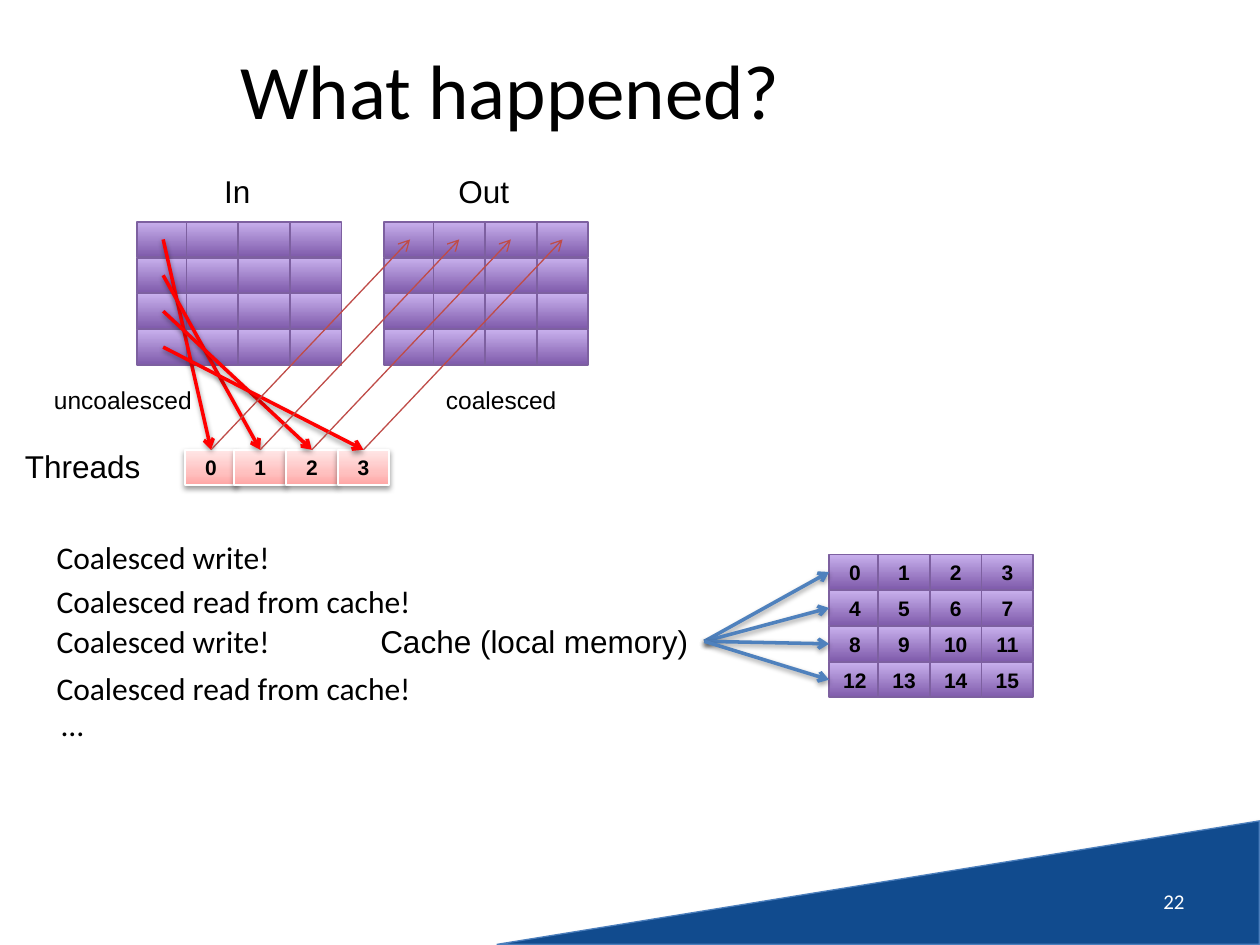
import pptx
import pptx.util
import pptx.dml.color
import pptx.enum.shapes
import pptx.enum.text
import pptx.oxml.ns
import lxml.etree

Inches, Pt = pptx.util.Inches, pptx.util.Pt
Shape = pptx.enum.shapes.MSO_SHAPE
Align = pptx.enum.text.PP_ALIGN
Anchor = pptx.enum.text.MSO_ANCHOR

THEME = {
    "head": "Calibri", "body": "Arial",
    "black": "000000", "white": "FFFFFF",
    "band": "114B8E", "edge": "4B7EBC",
    "read": "FF0000", "write": "BF4C48", "cache": "4F81BD",
    "purple": ([(0, "7F5BAB"), (100, "C8B0ED")], "7D60A0"),
    "pink": ([(0, "FFA6A5"), (35, "FFC0BF"), (100, "FFE7E7")], "FFFFFF"),
    "title": 44, "text": 18, "note": 14, "cell": 12,
    "thick": 2, "thin": 0.75, "border": 1,
}

TITLE = "What happened?"
NUMBER = "22"
BLANK = [[""] * 4 for row in range(4)]
THREADS = [["0", "1", "2", "3"]]
CACHE = [[str(4 * row + col) for col in range(4)] for row in range(4)]

LABELS = [
    ("uncoalesced", 0.33, 3.01, 1.3, "note", "body"),
    ("coalesced", 3.44, 3.01, 1.09, "note", "body"),
    ("Threads", 0.1, 3.5, 1.13, "text", "body"),
    ("In", 1.68, 1.32, 0.41, "text", "body"),
    ("Out", 3.54, 1.32, 0.61, "text", "body"),
    ("Cache (local memory)", 2.92, 4.89, 2.67, "text", "body"),
    ("Coalesced write!", 0.35, 4.22, 1.91, "text", "head"),
    ("Coalesced read from cache!", 0.35, 4.57, 3.05, "text", "head"),
    ("Coalesced write!", 0.35, 4.89, 1.91, "text", "head"),
    ("Coalesced read from cache!", 0.35, 5.26, 3.05, "text", "head"),
    ("…", 0.39, 5.55, 0.38, "text", "head"),
]

COLS = (0, 0.39, 0.8, 1.21)
WIDE, HIGH, STEP = 0.41, 0.28, 0.285
SOURCE = (5.59, 5.09)


def color(name):
    return pptx.dml.color.RGBColor.from_string(name)


def node(parent, tag, **attrs):
    return lxml.etree.SubElement(parent, pptx.oxml.ns.qn(tag), **attrs)


def effect(shape, alpha=0, dist=1.6):
    box = node(shape._element.spPr, "a:effectLst")
    if alpha:
        cast = node(box, "a:outerShdw", blurRad=str(Pt(3.1)), dist=str(Pt(dist)),
                    dir="5400000", rotWithShape="0")
        tint = node(cast, "a:srgbClr", val=THEME["black"])
        node(tint, "a:alpha", val=str(alpha * 1000))


def write(frame, text, font, size, align=Align.LEFT, ink="black", bold=False):
    para = frame.paragraphs[0]
    para.alignment = align
    run = para.add_run()
    run.text = text
    run.font.name = THEME[font]
    run.font.size = Pt(THEME[size])
    run.font.bold = bold
    run.font.color.rgb = color(THEME[ink])


def label(slide, text, left, top, width, size, font, **style):
    height = 0.34 if size == "note" else 0.4
    box = slide.shapes.add_textbox(*map(Inches, (left, top, width, height)))
    box.text_frame.word_wrap = False
    write(box.text_frame, text, font, size, **style)
    return box


def shade(shape, stops):
    shape.fill.gradient()
    shape.fill.gradient_angle = 90
    ramp = shape._element.spPr.find(".//" + pptx.oxml.ns.qn("a:gsLst"))
    for stop in list(ramp):
        ramp.remove(stop)
    for place, tint in stops:
        node(node(ramp, "a:gs", pos=str(place * 1000)), "a:srgbClr", val=tint)


def grid(slide, rows, left, top, look, alpha=0):
    stops, edge = THEME[look]
    cells = []
    for r, row in enumerate(rows):
        cells.append([])
        for shift, text in zip(COLS, row):
            cell = slide.shapes.add_shape(
                Shape.RECTANGLE, Inches(left + shift), Inches(top + r * STEP),
                Inches(WIDE), Inches(HIGH))
            shade(cell, stops)
            cell.line.color.rgb = color(edge)
            cell.line.width = Pt(THEME["border"])
            effect(cell, alpha)
            if text:
                cell.text_frame.vertical_anchor = Anchor.MIDDLE
                write(cell.text_frame, text, "body", "cell", Align.CENTER, bold=True)
            cells[-1].append(cell)
    return cells


def middle(cell):
    return cell.left + cell.width // 2, cell.top + cell.height // 2


def arrow(slide, start, end, tint, width, alpha=0, first=None, last=None):
    line = slide.shapes.add_connector(
        pptx.enum.shapes.MSO_CONNECTOR.STRAIGHT, *start, *end)
    if first:
        line.begin_connect(*first)
    if last:
        line.end_connect(*last)
    line.line.color.rgb = color(THEME[tint])
    line.line.width = Pt(THEME[width])
    node(line.line._get_or_add_ln(), "a:tailEnd", type="arrow")
    effect(line, alpha)


def main():
    deck = pptx.Presentation()
    deck.slide_width, deck.slide_height = Inches(10), Inches(7.5)
    slide = deck.slides.add_slide(deck.slide_layouts[5])

    band = slide.shapes.add_shape(
        Shape.RIGHT_TRIANGLE, *map(Inches, (6.48, 3.98, 0.98, 6.05)))
    band.rotation = 270
    band.fill.solid()
    band.fill.fore_color.rgb = color(THEME["band"])
    band.line.color.rgb = color(THEME["edge"])
    band.line.width = Pt(THEME["thin"])
    effect(band, 35, 1.8)

    title = slide.shapes.title
    title.left, title.top, title.width, title.height = map(
        Inches, (0.5, 0.08, 7.1, 1.25))
    title.text_frame.vertical_anchor = Anchor.MIDDLE
    write(title.text_frame, TITLE, "head", "title", Align.CENTER)

    page = label(slide, NUMBER, 7.17, 6.95, 2.33, "cell", "head",
                 align=Align.RIGHT, ink="white")
    page.text_frame.word_wrap = True
    page.text_frame.vertical_anchor = Anchor.MIDDLE

    source = grid(slide, BLANK, 1.09, 1.76, "purple")
    target = grid(slide, BLANK, 3.05, 1.76, "purple")
    threads = grid(slide, THREADS, 1.47, 3.57, "pink", 38)[0]
    cache = grid(slide, CACHE, 6.58, 4.4, "purple")

    for row, thread in zip(source, threads):
        spot = middle(row[0])
        arrow(slide, spot, spot, "read", "thick", 38, last=(thread, 0))
    for thread, cell in zip(threads, target[0]):
        spot = middle(cell)
        arrow(slide, spot, spot, "write", "thin", first=(thread, 0))
    hub = tuple(map(Inches, SOURCE))
    for row in cache:
        arrow(slide, hub, hub, "cache", "thick", 38, last=(row[0], 1))

    for item in LABELS:
        label(slide, *item)

    deck.save("out.pptx")


if __name__ == "__main__":
    main()
